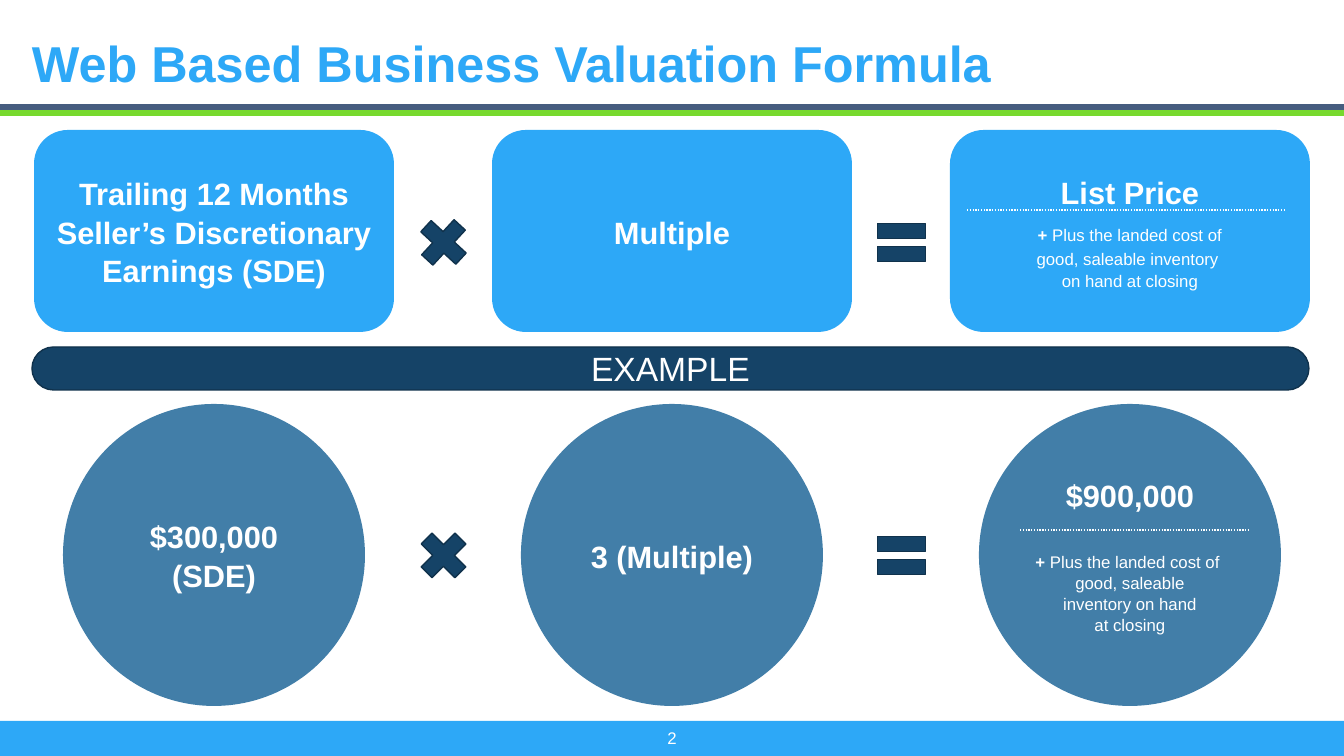
from lxml.etree import SubElement
from pptx import Presentation
from pptx.dml.color import RGBColor
from pptx.enum.dml import MSO_LINE
from pptx.enum.shapes import MSO_CONNECTOR, MSO_SHAPE as Preset
from pptx.enum.text import MSO_ANCHOR as Anchor, PP_ALIGN as Align
from pptx.oxml.ns import qn
from pptx.util import Emu, Pt

COLORS = {
    "sky": "2DA8F7",
    "slate": "465D7F",
    "green": "77D92E",
    "navy": "154367",
    "edge": "10324C",
    "steel": "427EA8",
    "white": "FFFFFF",
}
HEADING = {"size": Pt(22), "bold": True}
NOTE = {"size": Pt(12), "bold": False}
NOTE_LEAD = {"size": Pt(12), "bold": True}


def px(value):
    return Emu(round(value * 914400 / 100.8))


def color(name):
    return RGBColor.from_string(COLORS[name])


class FormulaSlide:
    """Draws the elements of a valuation formula on one slide."""

    def __init__(self, presentation):
        self.slide = presentation.slides.add_slide(presentation.slide_layouts[6])
        self.font_name = "Arial"

    def shape(self, preset, left, top, width, height, fill, edge=None, rotation=0):
        shape = self.slide.shapes.add_shape(preset, px(left), px(top), px(width), px(height))
        shape.shadow.inherit = False
        shape.rotation = rotation
        shape.fill.solid()
        shape.fill.fore_color.rgb = color(fill)
        if edge:
            shape.line.color.rgb = color(edge)
            shape.line.width = Pt(1)
        else:
            shape.line.fill.background()
        return shape

    def set_text(self, shape, paragraphs, align=Align.CENTER, anchor=Anchor.MIDDLE,
                 wrap=True, ink="white", spacing=None):
        frame = shape.text_frame
        frame_format = {"margin_left": 0, "margin_top": 0, "margin_right": 0,
                        "margin_bottom": 0, "vertical_anchor": anchor, "word_wrap": wrap}
        for name, value in frame_format.items():
            setattr(frame, name, value)
        for index, (runs, space_before) in enumerate(paragraphs):
            paragraph = frame.add_paragraph() if index else frame.paragraphs[0]
            paragraph_format = {"alignment": align, "line_spacing": spacing,
                                "space_before": Pt(space_before)}
            for name, value in paragraph_format.items():
                setattr(paragraph, name, value)
            for text, font_format in runs:
                run = paragraph.add_run()
                run.text = text
                run.font.color.rgb = color(ink)
                for name, value in {"name": self.font_name, **font_format}.items():
                    setattr(run.font, name, value)

    def label(self, left, top, width, height, text, font_format, **options):
        box = self.slide.shapes.add_textbox(px(left), px(top), px(width), px(height))
        self.set_text(box, [([(text, font_format)], 0)], **options)

    def term(self, preset, left, top, width, height, fill, heading, note=(), gaps=()):
        shape = self.shape(preset, left, top, width, height, fill)
        paragraphs = [([(heading, HEADING)], 0)]
        for index, (text, gap) in enumerate(zip(note, gaps)):
            lead = [] if index else [("+ ", NOTE_LEAD)]
            paragraphs.append((lead + [(text, NOTE)], gap))
        self.set_text(shape, paragraphs, wrap=not note, spacing=1.05)

    def dotted_line(self, left, right, top):
        line = self.slide.shapes.add_connector(
            MSO_CONNECTOR.STRAIGHT, px(left), px(top), px(right), px(top))
        line_format = {"width": Pt(1), "dash_style": MSO_LINE.ROUND_DOT}
        for name, value in line_format.items():
            setattr(line.line, name, value)
        line.line.color.rgb = color("white")
        SubElement(line._element.spPr, qn("a:effectLst"))

    def operators(self, top, rotation):
        signs = [(Preset.MATH_PLUS, rotation), (Preset.MATH_EQUAL, 0)]
        for column, (preset, angle) in enumerate(signs):
            self.shape(preset, 411 + 458 * column, top, 65, 65, "navy", "edge", angle)


def main():
    presentation = Presentation()
    presentation.slide_width, presentation.slide_height = px(1344), px(756)
    formula = FormulaSlide(presentation)

    for top, height, fill in [(721, 35, "sky"), (104, 6, "slate"), (110, 6, "green")]:
        formula.shape(Preset.RECTANGLE, 0, top, 1344, height, fill)
    formula.label(32, 32, 1280, 61, "Web Based Business Valuation Formula",
                  {"size": Pt(36), "bold": True},
                  align=Align.LEFT, anchor=Anchor.BOTTOM, ink="sky")

    price_note = ["Plus the landed cost of", "good, saleable inventory ", "on hand at closing"]
    value_note = ["Plus the landed cost of ", "good, saleable", "inventory on hand", "at closing"]
    terms = [("Trailing 12 Months Seller’s Discretionary Earnings (SDE)",),
             ("Multiple",),
             ("List Price", price_note, (10, 2, 0))]
    examples = [("$300,000 (SDE)",),
                ("3 (Multiple)",),
                ("$900,000", value_note, (26, 0, 0, 0))]
    for column, (term, example) in enumerate(zip(terms, examples)):
        left = 34 + 458 * column
        formula.term(Preset.ROUNDED_RECTANGLE, left, 130, 360, 202, "sky", *term)
        formula.term(Preset.OVAL, left + 29, 404, 302, 302, "steel", *example)

    formula.dotted_line(967, 1286, 210)
    formula.dotted_line(1020, 1248, 530)
    formula.operators(210, 42.8)
    formula.operators(523, 45.1)

    banner = formula.shape(Preset.ROUNDED_RECTANGLE, 32, 347, 1277, 43, "navy", "edge")
    banner.adjustments[0] = 0.5
    formula.set_text(banner, [([("EXAMPLE", {"size": Pt(24)})], 0)])
    formula.label(662, 728, 20, 20, "2", {"size": Pt(12)}, wrap=False)

    presentation.save("out.pptx")


if __name__ == "__main__":
    main()
